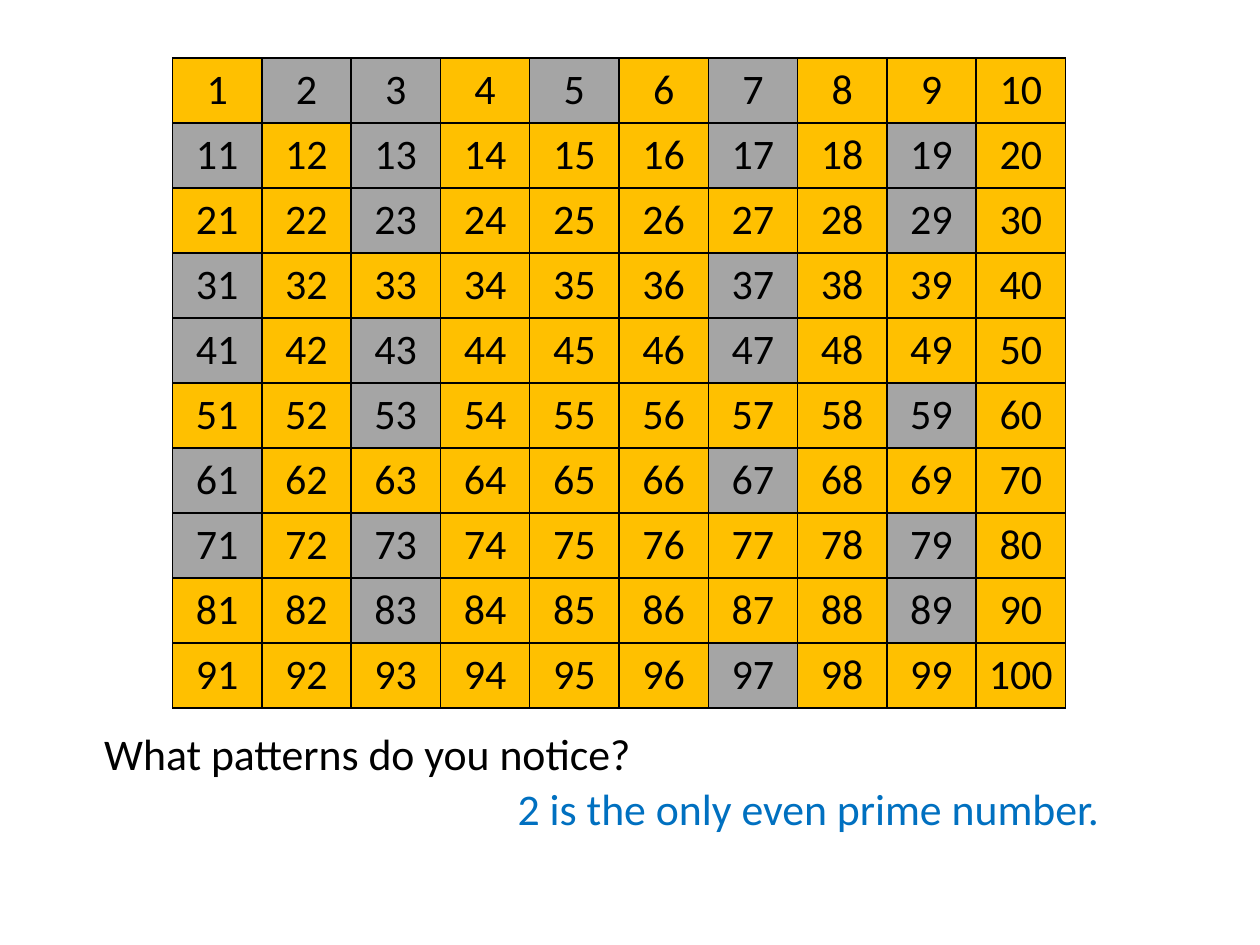
from lxml import etree
from pptx import Presentation
from pptx.dml.color import RGBColor
from pptx.enum import text
from pptx.oxml import ns
from pptx.util import Pt

COLORS = {"ink": "000000", "answer": "0070C0", "prime": "A5A5A5", "other": "FFC000"}
FONT = "Calibri"
SIZE = 10


def style_font(paragraph, size, color):
    for run in paragraph.runs:
        run.font.name = FONT
        run.font.size = Pt(size)
        run.font.bold = False
        run.font.color.rgb = RGBColor.from_string(COLORS[color])


def add_borders(cell):
    properties = cell._tc.get_or_add_tcPr()
    for side in ("lnL", "lnR", "lnT", "lnB"):
        line = etree.SubElement(properties, ns.qn(f"a:{side}"), w=str(Pt(1)))
        fill = etree.SubElement(line, ns.qn("a:solidFill"))
        etree.SubElement(fill, ns.qn("a:srgbClr"), val=COLORS["ink"])


prs = Presentation()
prs.slide_width, prs.slide_height = Pt(720), Pt(540)
slide = prs.slides.add_slide(prs.slide_layouts[6])

# Question and answer
for words, left, top, width, color in (
    ("What patterns do you notice?", 52.5, 411.8, 343, "ink"),
    ("2 is the only even prime number.", 288.7, 443, 366.5, "answer"),
):
    sentence = slide.shapes.add_textbox(Pt(left), Pt(top), Pt(width), Pt(37.5))
    frame = sentence.text_frame
    frame.word_wrap = True
    frame.auto_size = text.MSO_AUTO_SIZE.SHAPE_TO_FIT_TEXT
    frame.text = words
    style_font(frame.paragraphs[0], 25, color)

# Hundred square
square = slide.shapes.add_table(
    SIZE, SIZE, Pt(98.6), Pt(33.1), Pt(510.5), Pt(371.5)
).table
square.first_row = square.horz_banding = False
for column in square.columns:
    column.width = Pt(51.05)
for row in square.rows:
    row.height = Pt(37.15)

# Numbers, with the primes shaded
for number, cell in enumerate(square.iter_cells(), start=1):
    is_prime = number > 1 and all(number % d for d in range(2, number))
    cell.text = str(number)
    cell.vertical_anchor = text.MSO_ANCHOR.MIDDLE
    cell.margin_left = cell.margin_right = Pt(3)
    add_borders(cell)
    cell.fill.solid()
    cell.fill.fore_color.rgb = RGBColor.from_string(
        COLORS["prime" if is_prime else "other"]
    )
    paragraph = cell.text_frame.paragraphs[0]
    paragraph.alignment = text.PP_ALIGN.CENTER
    style_font(paragraph, 24, "ink")

prs.save("out.pptx")
